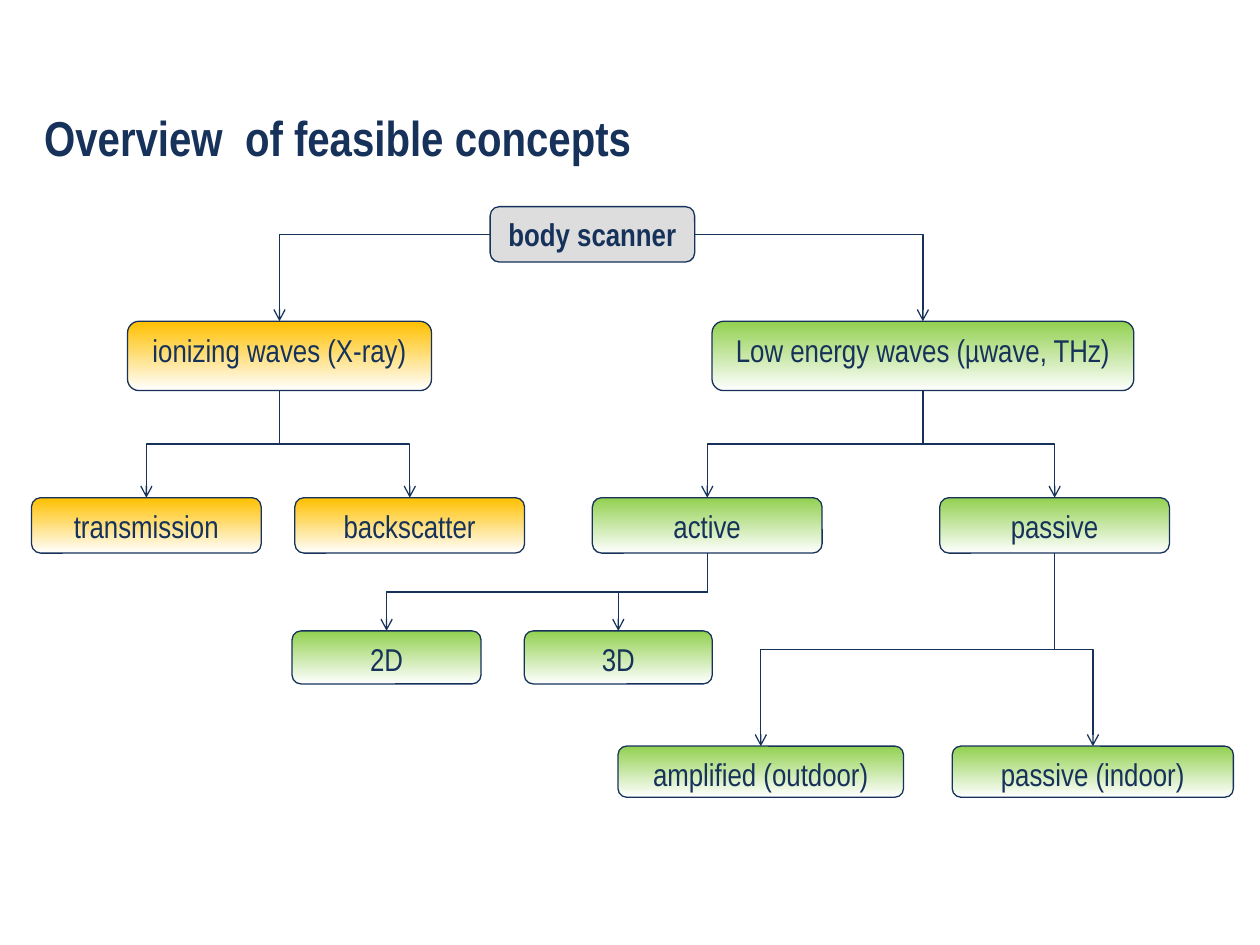
"""Build a slide with a tree of body scanner concepts."""
import lxml.etree
import pptx
import pptx.util
import pptx.dml.color
import pptx.enum.shapes
import pptx.enum.text
import pptx.oxml.ns

Pt = pptx.util.Pt
qn = pptx.oxml.ns.qn
hues = {"navy": "16325A", "grey": "DDDDDD", "gold": "FFC000", "green": "92D050", "white": "FFFFFF"}
rgb = {name: pptx.dml.color.RGBColor.from_string(code) for name, code in hues.items()}
align = pptx.enum.text.PP_ALIGN
anchor = pptx.enum.text.MSO_ANCHOR


def write(shape, text, side, look):
    frame = shape.text_frame
    frame.text = text
    frame.word_wrap = True
    frame.auto_size = pptx.enum.text.MSO_AUTO_SIZE.NONE
    frame.vertical_anchor = anchor.TOP
    line = frame.paragraphs[0]
    line.alignment = side
    for key, value in look.items():
        setattr(line.font, key, value)
    line.font.color.rgb = rgb["navy"]


deck = pptx.Presentation()
deck.slide_width, deck.slide_height = Pt(720), Pt(540)
slide = deck.slides.add_slide(deck.slide_layouts[5])

title = slide.shapes.title
place = {"left": 18, "top": 57.6, "width": 589.7, "height": 64}
for key, value in place.items():
    setattr(title, key, Pt(value))
write(title, "Overview  of feasible concepts", align.LEFT,
      {"name": "Arial Narrow", "size": Pt(28), "bold": True})

rows = [
    (118.1, 31.7, [("body scanner", 280.1, 116.9, "grey")]),
    (183.6, 39.6, [("ionizing waves (X-ray)", 72.9, 173.7, "gold"),
                   ("Low energy waves (µwave, THz)", 406.9, 241, "green")]),
    (284.4, 31.7, [("transmission", 18, 131.3, "gold"), ("backscatter", 168.5, 131.3, "gold"),
                   ("active", 338.5, 131.3, "green"), ("passive", 537, 131.3, "green")]),
    (360.5, 30.3, [("2D", 166.9, 108, "green"), ("3D", 299.6, 107.4, "green")]),
    (426.4, 29.2, [("amplified (outdoor)", 353.2, 163.1, "green"),
                   ("passive (indoor)", 544.2, 160.6, "green")]),
]
nodes = {}
for top, high, cells in rows:
    for text, left, wide, hue in cells:
        node = slide.shapes.add_shape(pptx.enum.shapes.MSO_SHAPE.ROUNDED_RECTANGLE,
                                      Pt(left), Pt(top), Pt(wide), Pt(high))
        node.shadow.inherit = False
        if hue == "grey":
            node.fill.solid()
            node.fill.fore_color.rgb = rgb[hue]
        else:
            node.fill.gradient()
            node.fill.gradient_angle = 270
            for stop, tone in zip(node.fill.gradient_stops, (hue, "white")):
                stop.color.rgb = rgb[tone]
        node.line.color.rgb = rgb["navy"]
        node.line.width = Pt(0.75)
        write(node, text, align.CENTER,
              {"name": "Arial Narrow", "size": Pt(18), "bold": hue == "grey"})
        nodes[text] = node

tree = {
    "body scanner": ["ionizing waves (X-ray)", "Low energy waves (µwave, THz)"],
    "ionizing waves (X-ray)": ["transmission", "backscatter"],
    "Low energy waves (µwave, THz)": ["active", "passive"],
    "passive": ["passive (indoor)", "amplified (outdoor)"],
    "active": ["2D", "3D"],
}
for head, kids in tree.items():
    for kid in kids:
        start, end = nodes[head], nodes[kid]
        link = slide.shapes.add_connector(pptx.enum.shapes.MSO_CONNECTOR.ELBOW, 0, 0, 0, 0)
        left = end.left + end.width // 2 < start.left + start.width // 2
        root = head == "body scanner"
        link.begin_connect(start, (1 if left else 3) if root else 2)
        link.end_connect(end, 0)
        props = link._element.spPr
        if root:
            props.find(qn("a:prstGeom")).set("prst", "bentConnector2")
        else:
            wide, high = link.width, link.height
            link.left += (wide - high) // 2
            link.top += (high - wide) // 2
            link.width, link.height = high, wide
            frame = props.find(qn("a:xfrm"))
            frame.set("rot", str((90 if left else 270) * 60000))
            frame.set("flipH", "0" if left else "1")
        link.line.color.rgb = rgb["navy"]
        link.line.width = Pt(0.75)
        lxml.etree.SubElement(props.find(qn("a:ln")), qn("a:tailEnd"), type="arrow")
        lxml.etree.SubElement(props, qn("a:effectLst"))

deck.save("out.pptx")
